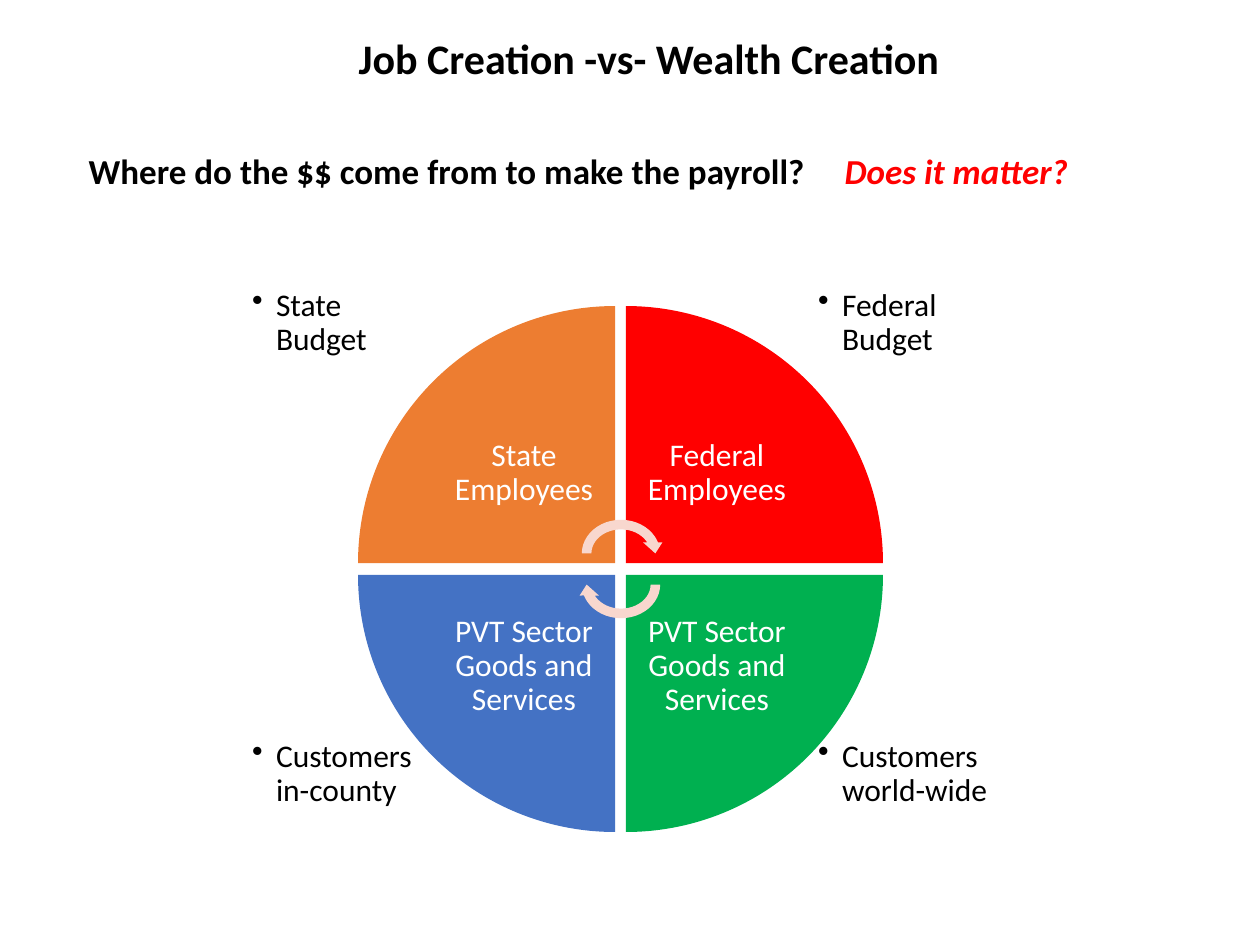
from lxml.etree import SubElement as Sub
from pptx import Presentation
from pptx.dml.color import RGBColor as RGB
from pptx.enum.shapes import MSO_SHAPE as Kind
from pptx.enum.text import MSO_ANCHOR as Anchor, MSO_AUTO_SIZE as Auto, PP_ALIGN as Align
from pptx.oxml.ns import qn
from pptx.util import Pt

BLACK, WHITE = RGB(0, 0, 0), RGB(255, 255, 255)
RED, GREEN = RGB(255, 0, 0), RGB(0, 176, 80)
ORANGE, BLUE = RGB(237, 125, 49), RGB(68, 114, 196)
PINK = RGB(248, 215, 206)

TITLE = "Job Creation -vs- Wealth Creation"
ASK = "Where do the $$ come from to make the payroll?"
HOOK = "Does it matter?"
PARTS = [
    (0, 0, ORANGE, "State Employees", "State Budget"),
    (1, 0, RED, "Federal Employees", "Federal Budget"),
    (1, 1, GREEN, "PVT Sector Goods and Services", "Customers world-wide"),
    (0, 1, BLUE, "PVT Sector Goods and Services", "Customers in-county"),
]
NOTE = {"x": (239, 805), "y": (276, 727), "w": 197, "h": 134}
WEDGE = {"x": (358, 626), "y": (306, 575), "w": 257, "h": 257}
NAME = {"x": (433, 626), "y": (382, 575), "w": 182, "h": 182}
ARROWS = [(515, 0), (546, 180)]
HEAD = {"size": Pt(24), "bold": True}
LINE = {"size": Pt(20), "bold": True}
PLAIN = {"size": Pt(18), "bold": False}


def px(num):
    return round(num * 914400 / 126)


def put(obj, **vals):
    for key, val in vals.items():
        setattr(obj, key, val)


def spot(grid, col, row):
    return [px(n) for n in (grid["x"][col], grid["y"][row], grid["w"], grid["h"])]


def place(shape, *box):
    put(shape, **dict(zip(("left", "top", "width", "height"), map(px, box))))


def frame(shape, pad, anchor, wrap=True):
    text = shape.text_frame
    put(text, auto_size=Auto.NONE, word_wrap=wrap, vertical_anchor=anchor)
    if pad:
        sides = ("left", "top", "right", "bottom")
        put(text, **{f"margin_{side}": px(pad) for side in sides})
    return text.paragraphs[0]


def write(para, words, color, form):
    run = para.add_run()
    run.text = words
    put(run.font, name="Calibri", **form)
    run.font.color.rgb = color


def draw(slide, kind, box, color, turn):
    shape = slide.shapes.add_shape(kind, *box)
    shape.rotation = turn
    shape.shadow.inherit = False
    shape.fill.solid()
    shape.fill.fore_color.rgb = color
    shape.line.fill.background()


def add_head(slide):
    title, body = slide.placeholders
    place(title, 340, 26, 618, 63)
    para = frame(title, 0, Anchor.MIDDLE, False)
    para.alignment = Align.CENTER
    write(para, TITLE, BLACK, HEAD)

    place(body, 76, 101, 1113, 97)
    para = frame(body, 0, Anchor.BOTTOM)
    put(para, alignment=Align.LEFT, space_before=Pt(0))
    props = para._p.get_or_add_pPr()
    props.set("marL", "0")
    props.set("indent", "0")
    Sub(props, qn("a:buNone"))
    tabs = Sub(props, qn("a:tabLst"))
    Sub(tabs, qn("a:tab"), pos=str(px(739)), algn="l")
    write(para, ASK + "\t", BLACK, LINE)
    write(para, HOOK, RED, {**LINE, "italic": True})


def add_note(slide, col, row, words):
    box = slide.shapes.add_textbox(*spot(NOTE, col, row))
    para = frame(box, 13, Anchor.TOP)
    para.line_spacing = 0.9
    props = para._p.get_or_add_pPr()
    props.set("marL", str(px(24)))
    props.set("indent", str(px(-24)))
    Sub(props, qn("a:buChar"), char="•")
    write(para, words, BLACK, PLAIN)


def add_name(slide, col, row, words):
    box = slide.shapes.add_textbox(*spot(NAME, col, row))
    para = frame(box, 18, Anchor.MIDDLE)
    put(para, alignment=Align.CENTER, line_spacing=0.9)
    write(para, words, WHITE, PLAIN)


def main():
    deck = Presentation()
    put(deck, slide_width=px(1260), slide_height=px(945))
    slide = deck.slides.add_slide(deck.slide_layouts[1])
    add_head(slide)
    for col, row, _, _, note in PARTS:
        add_note(slide, col, row, note)
    for step, (col, row, color, name, _) in enumerate(PARTS):
        draw(slide, Kind.PIE_WEDGE, spot(WEDGE, col, row), color, step * 90)
        add_name(slide, col, row, name)
    for top, turn in ARROWS:
        box = [px(n) for n in (577, top, 88, 77)]
        draw(slide, Kind.CIRCULAR_ARROW, box, PINK, turn)
    deck.save("out.pptx")


if __name__ == "__main__":
    main()
